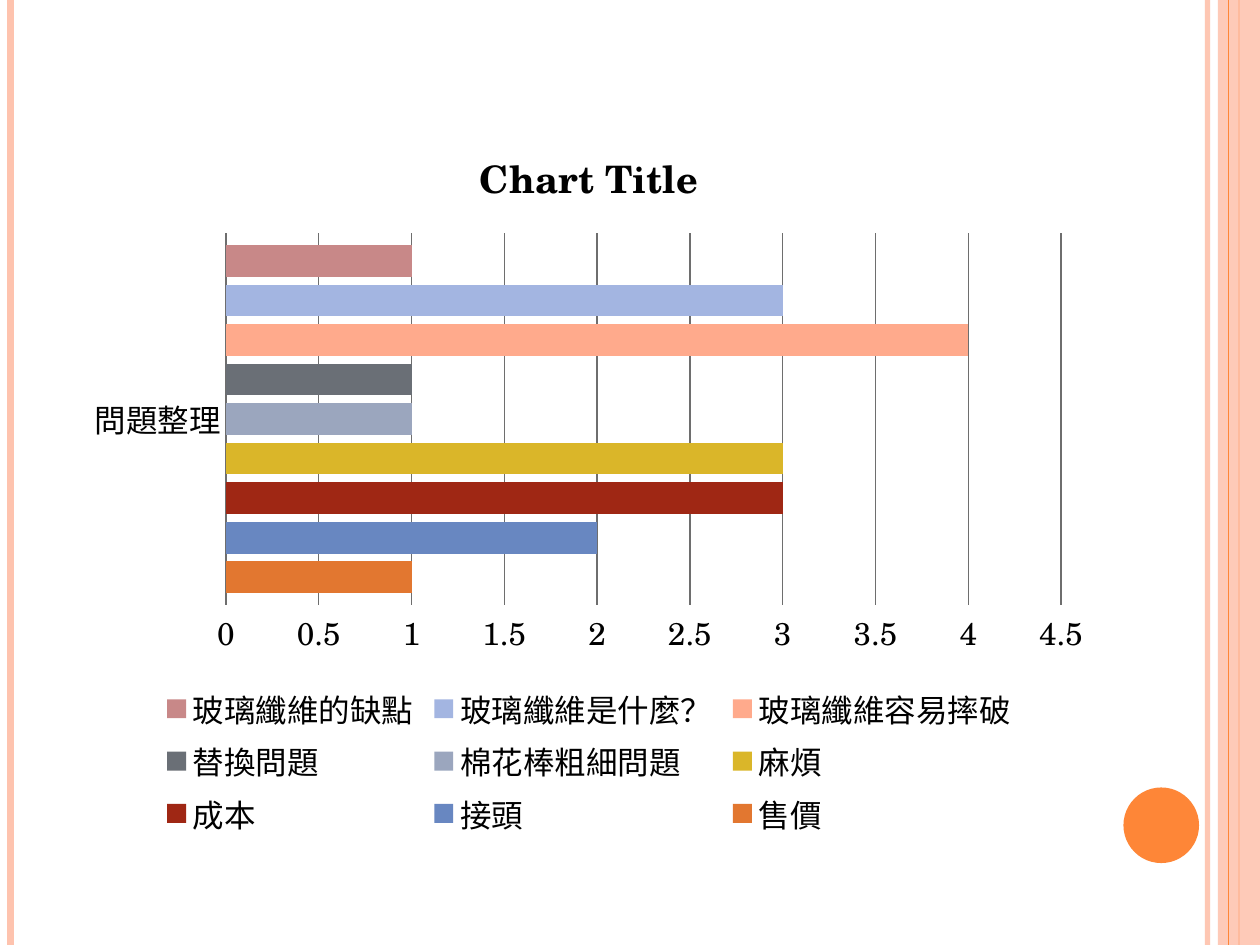
from lxml import etree
from pptx import Presentation
from pptx.chart.data import CategoryChartData
from pptx.dml.color import RGBColor
from pptx.enum.chart import XL_CHART_TYPE, XL_LEGEND_POSITION, XL_TICK_MARK
from pptx.enum.shapes import MSO_CONNECTOR, MSO_SHAPE
from pptx.oxml.ns import qn
from pptx.util import Pt

STRAIGHT = MSO_CONNECTOR.STRAIGHT
RECTANGLE, OVAL = MSO_SHAPE.RECTANGLE, MSO_SHAPE.OVAL
BAR_CLUSTERED = XL_CHART_TYPE.BAR_CLUSTERED
BOTTOM = XL_LEGEND_POSITION.BOTTOM
NO_TICK = XL_TICK_MARK.NONE
FONT = "TeX Gyre Schola"
PEACH, ORANGE, GRID, BLACK = "FEC3AE", "FE8637", "6E6E6E", "000000"


def color(hex_text):
    return RGBColor.from_string(hex_text)


def format_text(text, font, size=18, bold=False):
    """Write text, if any, into a text frame and format the font."""
    if text is not None:
        frame, words = text
        frame.text = words
        font = frame.paragraphs[0].runs[0].font
    font.name, font.size, font.bold = FONT, Pt(size), bold
    font.color.rgb = color(BLACK)


deck = Presentation()
deck.slide_width, deck.slide_height = Pt(720), Pt(540)
page = deck.slides.add_slide(deck.slide_layouts[6])

# Edge decoration, from back to front: x, width, colour, opacity in percent
stripes = [
    (690, 3, PEACH, 93),
    (6, 4.5, PEACH, 100),
    (708, 1.5, ORANGE, 100),
    (702, 0.75, ORANGE, 100),
]
for index, (x, width, hue, opacity) in enumerate(stripes):
    if index == 3:  # the translucent band lies below the last stripe
        band = page.shapes.add_shape(RECTANGLE, Pt(696), 0, Pt(24), Pt(540))
    stripe = page.shapes.add_connector(STRAIGHT, Pt(x), 0, Pt(x), Pt(540))
    stripe.line.width = Pt(width)
    stripe.line.color.rgb = color(hue)
    properties = stripe._element.spPr
    etree.SubElement(properties, qn("a:effectLst"))
    if opacity < 100:
        tint = properties.find(".//" + qn("a:srgbClr"))
        etree.SubElement(tint, qn("a:alpha"), val=str(opacity * 1000))

circle = page.shapes.add_shape(OVAL, Pt(642), Pt(450), Pt(43.2), Pt(43.2))
for shape, hue in ((band, PEACH), (circle, ORANGE)):
    shape.shadow.inherit = False
    shape.fill.solid()
    shape.fill.fore_color.rgb = color(hue)
    shape.line.fill.background()
tint = band._element.spPr.find(".//" + qn("a:srgbClr"))
etree.SubElement(tint, qn("a:alpha"), val="87000")

# Chart data: name, value, bar colour
problems = [
    ("售價", 1, "E27730"),
    ("接頭", 2, "6887C1"),
    ("成本", 3, "9F2714"),
    ("麻煩", 3, "DAB629"),
    ("棉花棒粗細問題", 1, "9BA6BE"),
    ("替換問題", 1, "6A6F76"),
    ("玻璃纖維容易摔破", 4, "FFAA8C"),
    ("玻璃纖維是什麼？", 3, "A3B5E1"),
    ("玻璃纖維的缺點", 1, "C88888"),
]
data = CategoryChartData()
data.categories = ["問題整理"]
for name, value, hue in problems:
    data.add_series(name, [value])
chart = page.shapes.add_chart(
    BAR_CLUSTERED, Pt(42.5), Pt(66.2), Pt(588.2), Pt(415.4), data).chart
format_text(None, chart.font)
chart.has_title = True
format_text((chart.chart_title.text_frame, "Chart Title"), None, size=21.6, bold=True)

# Bars
plot = chart.plots[0]
plot.gap_width, plot.overlap, plot.vary_by_categories = 75, -25, False
for series, (name, value, hue) in zip(plot.series, problems):
    series.format.fill.solid()
    series.format.fill.fore_color.rgb = color(hue)

# Axes, grid and legend
for axis in (chart.category_axis, chart.value_axis):
    axis.major_tick_mark = axis.minor_tick_mark = NO_TICK
values = chart.value_axis
values.minimum_scale, values.maximum_scale, values.major_unit = 0, 4.5, 0.5
values.tick_labels.number_format = "General"
values.tick_labels.number_format_is_linked = False
values.format.line.fill.background()
values.has_major_gridlines = True
for line in (values.major_gridlines.format.line, chart.category_axis.format.line):
    line.width = Pt(0.75)
    line.color.rgb = color(GRID)
chart.has_legend = True
chart.legend.position = BOTTOM
chart.legend.include_in_layout = False

deck.save("out.pptx")
